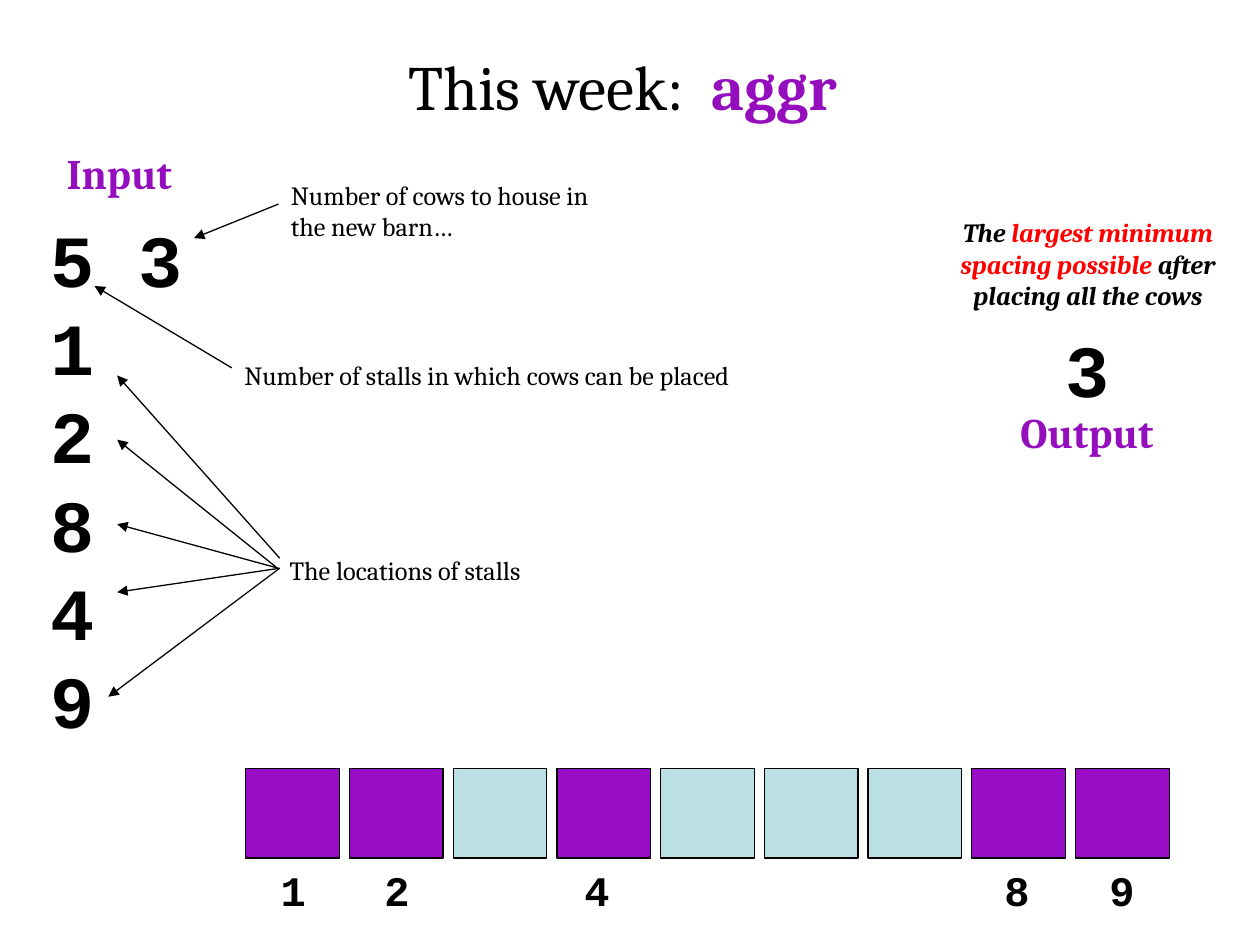
from lxml.etree import SubElement
from pptx import Presentation
from pptx.dml.color import RGBColor
from pptx.enum.shapes import MSO_CONNECTOR, MSO_SHAPE
from pptx.enum.text import MSO_AUTO_SIZE, PP_ALIGN
from pptx.oxml.ns import qn
from pptx.util import Inches, Pt

BLACK = RGBColor(0x00, 0x00, 0x00)
RED = RGBColor(0xFF, 0x00, 0x00)
HEADING_PURPLE = RGBColor(0x94, 0x0E, 0xBE)
STALL_PURPLE = RGBColor(0x9A, 0x0D, 0xC7)
STALL_BLUE = RGBColor(0xBB, 0xE0, 0xE3)
SERIF = "Cambria"
MONO = "Courier New"


def add_text(slide, box, text, size=15, font=SERIF, color=BLACK, bold=False,
             italic=False, align=PP_ALIGN.LEFT, wrap=False):
    shape = slide.shapes.add_textbox(*map(Inches, box))
    frame = shape.text_frame
    frame.word_wrap = wrap
    frame.auto_size = MSO_AUTO_SIZE.SHAPE_TO_FIT_TEXT
    lines = [[(line, {})] for line in text.split("\n")] if isinstance(text, str) else [text]
    for index, parts in enumerate(lines):
        paragraph = frame.add_paragraph() if index else frame.paragraphs[0]
        paragraph.alignment = align
        for words, changes in parts:
            run = paragraph.add_run()
            run.text = words
            run.font.name = font
            run.font.size = Pt(size)
            run.font.bold = changes.get("bold", bold)
            run.font.italic = italic
            run.font.color.rgb = changes.get("color", color)


def add_arrow(slide, start, end):
    arrow = slide.shapes.add_connector(
        MSO_CONNECTOR.STRAIGHT, *map(Inches, (*start, *end)))
    arrow.line.color.rgb = BLACK
    arrow.line.width = Pt(0.75)
    SubElement(arrow.line._get_or_add_ln(), qn("a:tailEnd"), type="triangle")
    SubElement(arrow._element.spPr, qn("a:effectLst"))


def add_title(slide, box):
    parts = [("This week:  ", {}), ("aggr", {"color": HEADING_PURPLE, "bold": True})]
    add_text(slide, box, parts, size=36, align=PP_ALIGN.CENTER, wrap=True)


def add_input(slide, left, top):
    add_text(slide, (left + 0.13, top, 1.05, 0.5), "Input",
             size=24, color=HEADING_PURPLE, bold=True)
    add_text(slide, (left, top + 0.53, 1.25, 4.3), "5 3\n1\n2\n8\n4\n9",
             size=42, font=MONO, bold=True)


def add_explanations(slide, left, top):
    notes = [
        ((0.67, 0, 2.76, 0.61), "Number of cows to house in the new barn…", True),
        ((0.3, 1.43, 4.35, 0.35), "Number of stalls in which cows can be placed", False),
        ((0.66, 2.98, 2.19, 0.35), "The locations of stalls", False),
    ]
    for (x, y, width, height), text, wrap in notes:
        add_text(slide, (left + x, top + y, width, height), text, wrap=wrap)
    arrows = [
        ((0.67, 0.25), (0, 0.52)),
        ((0.3, 1.55), (-0.79, 0.9)),
        ((0.68, 3.06), (-0.61, 1.61)),
        ((0.65, 3.13), (-0.61, 2.12)),
        ((0.67, 3.14), (-0.61, 2.79)),
        ((0.68, 3.14), (-0.61, 3.33)),
        ((0.68, 3.14), (-0.68, 4.16)),
    ]
    for start, end in arrows:
        add_arrow(slide, (left + start[0], top + start[1]), (left + end[0], top + end[1]))


def add_output(slide, left, top):
    parts = [
        ("The ", {}),
        ("largest minimum spacing possible ", {"color": RED}),
        ("after placing all the cows", {}),
    ]
    add_text(slide, (left, top, 2.37, 0.86), parts, bold=True, italic=True,
             align=PP_ALIGN.CENTER, wrap=True)
    add_text(slide, (left + 0.91, top + 0.85, 0.55, 0.8), "3",
             size=42, font=MONO, bold=True)
    add_text(slide, (left + 0.55, top + 1.51, 1.29, 0.5), "Output",
             size=24, color=HEADING_PURPLE, bold=True)


def add_stalls(slide, left, top, width, height, count=9, gap=0.08):
    side = (width - gap * (count - 1)) / count
    label_offsets = {1: 0.18, 2: 0.18, 4: 0.12, 8: 0.16, 9: 0.17}
    for number in range(1, count + 1):
        x = left + (number - 1) * (side + gap)
        stall = slide.shapes.add_shape(
            MSO_SHAPE.RECTANGLE, *map(Inches, (x, top, side, height)))
        stall.shadow.inherit = False
        stall.fill.solid()
        stall.fill.fore_color.rgb = STALL_PURPLE if number in label_offsets else STALL_BLUE
        stall.line.color.rgb = BLACK
        stall.line.width = Pt(0.75)
        if number in label_offsets:
            add_text(slide, (x + label_offsets[number], top + height, 0.4, 0.5),
                     str(number), size=24, font=MONO, bold=True)


def main():
    presentation = Presentation()
    presentation.slide_width = Inches(10)
    presentation.slide_height = Inches(7.5)
    slide = presentation.slides.add_slide(presentation.slide_layouts[6])
    add_title(slide, (1.69, 0.33, 6.5, 0.7))
    add_input(slide, 0.3, 1.12)
    add_stalls(slide, 1.95, 6.1, 7.33, 0.71)
    add_explanations(slide, 1.54, 1.37)
    add_output(slide, 7.45, 1.67)
    presentation.save("out.pptx")


if __name__ == "__main__":
    main()
